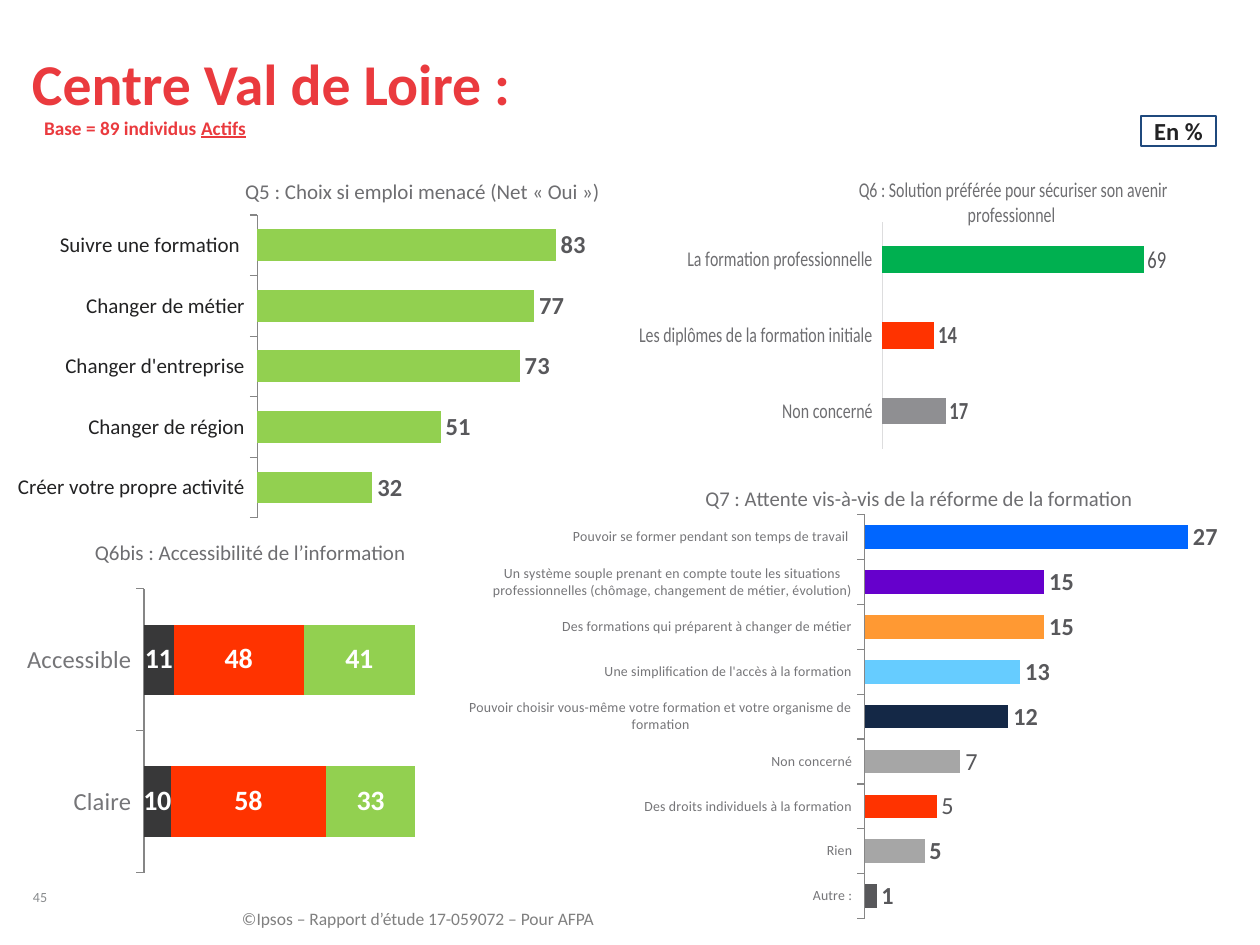
"""Build the Centre Val de Loire survey slide with its four bar charts."""
from dataclasses import dataclass, field
from typing import Any

from lxml.etree import SubElement
from pptx import Presentation
from pptx.chart.data import CategoryChartData
from pptx.dml.color import RGBColor
from pptx.enum.chart import XL_CHART_TYPE, XL_LABEL_POSITION, XL_TICK_LABEL_POSITION, XL_TICK_MARK
from pptx.enum.shapes import MSO_SHAPE
from pptx.enum.text import MSO_ANCHOR, MSO_AUTO_SIZE, PP_ALIGN
from pptx.oxml.ns import qn
from pptx.util import Emu, Pt

COLORS = {
    "red": "EA3A3E", "ink": "222223", "title": "6E6E71", "axis_text": "757578",
    "axis": "868686", "pale_axis": "DDDDDE", "label": "58585B", "white": "FFFFFF",
    "footer": "808080", "number": "888B8D", "frame": "1F497D", "lime": "92D050",
    "orange_red": "FF3300", "charcoal": "383839", "green": "00B050", "grey": "8F8F92",
    "silver": "A6A6A6", "navy": "142846", "sky": "66CCFF", "orange": "FF9933",
    "purple": "6600CC", "blue": "0066FF",
}


@dataclass(frozen=True)
class Box:
    left: int
    top: int
    width: int
    height: int

    def emu(self) -> tuple[Emu, ...]:
        return tuple(map(px, (self.left, self.top, self.width, self.height)))


@dataclass(frozen=True)
class Question:
    title: str
    title_at: tuple[int, int]
    frame: Box
    plot: Box
    categories: tuple[str, ...]
    answers: tuple[tuple[str, tuple[int, ...]], ...]
    maximum: int
    gap: int = 90
    stacked: bool = False
    ticks: XL_TICK_MARK = XL_TICK_MARK.OUTSIDE
    axis_color: str = "axis"
    category_font: dict[str, Any] = field(default_factory=dict)
    label_font: dict[str, Any] = field(default_factory=dict)
    point_colors: tuple[str, ...] = ()
    point_labels: dict[int, str] = field(default_factory=dict)


@dataclass(frozen=True)
class Note:
    box: Box
    runs: tuple[tuple[str, dict[str, Any]], ...]
    anchor: MSO_ANCHOR = MSO_ANCHOR.TOP
    wrap: bool = True


def px(length: int) -> Emu:
    return Emu(length * 914400 // 126)


def rgb(name: str) -> RGBColor:
    return RGBColor.from_string(COLORS[name])


def font_format(size: int, color: str, bold: bool = False, **extra: Any) -> dict[str, Any]:
    return {"name": "Calibri", "size": Pt(size), "bold": bold, "color": color, **extra}


def set_all(target: Any, values: dict[str, Any]) -> None:
    for name, value in values.items():
        if name == "color":
            target.color.rgb = rgb(value)
        else:
            setattr(target, name, value)


def fill(target: Any, color: str) -> None:
    target.format.fill.solid()
    target.format.fill.fore_color.rgb = rgb(color)


def set_layout(parent: Any, position: int, values: dict[str, Any]) -> None:
    for previous in parent.findall(qn("c:layout")):
        parent.remove(previous)
    layout = SubElement(parent, qn("c:layout"))
    manual = SubElement(layout, qn("c:manualLayout"))
    for name, value in values.items():
        SubElement(manual, qn(f"c:{name}")).set("val", str(value))
    parent.insert(position, layout)


def place_parts(chart: Any, question: Question) -> None:
    frame, plot = question.frame, question.plot

    def corner(left: int, top: int) -> dict[str, Any]:
        return {"xMode": "edge", "yMode": "edge",
                "x": round((left - frame.left) / frame.width, 3),
                "y": round((top - frame.top) / frame.height, 3)}

    set_layout(chart.chart_title._element, 1, corner(*question.title_at))
    set_layout(chart._chartSpace.chart.plotArea, 0, {
        "layoutTarget": "inner", **corner(plot.left, plot.top),
        "w": round(plot.width / frame.width, 3), "h": round(plot.height / frame.height, 3)})


def format_axes(chart: Any, question: Question) -> None:
    set_all(chart.value_axis, {
        "visible": False, "has_major_gridlines": False,
        "minimum_scale": 0, "maximum_scale": question.maximum})
    axis = chart.category_axis
    set_all(axis, {
        "has_major_gridlines": False, "major_tick_mark": question.ticks,
        "minor_tick_mark": XL_TICK_MARK.NONE,
        "tick_label_position": XL_TICK_LABEL_POSITION.LOW})
    set_all(axis.tick_labels.font, question.category_font)
    set_all(axis.format.line, {"width": Pt(0.75), "color": question.axis_color})


def draw_question(slide: Any, question: Question) -> None:
    table = CategoryChartData()
    table.categories = question.categories
    for number, (_, values) in enumerate(question.answers, 1):
        table.add_series(f"Series {number}", values)
    kind = XL_CHART_TYPE.BAR_STACKED_100 if question.stacked else XL_CHART_TYPE.BAR_CLUSTERED
    position = XL_LABEL_POSITION.CENTER if question.stacked else XL_LABEL_POSITION.OUTSIDE_END
    chart = slide.shapes.add_chart(kind, *question.frame.emu(), table).chart
    set_all(chart, {"has_legend": False, "has_title": True})
    set_all(chart.font, font_format(12, "ink"))
    heading = chart.chart_title.text_frame.paragraphs[0].add_run()
    heading.text = question.title
    set_all(heading.font, font_format(12, "title"))
    set_all(chart.plots[0], {
        "gap_width": question.gap, "vary_by_categories": False,
        "overlap": 100 if question.stacked else 0})
    format_axes(chart, question)
    place_parts(chart, question)
    for series, (color, _) in zip(chart.plots[0].series, question.answers):
        fill(series, color)
        series.invert_if_negative = False
        set_all(series.data_labels, {"show_value": True, "position": position})
        set_all(series.data_labels.font, question.label_font)
        for index, point_color in enumerate(question.point_colors):
            fill(series.points[index], point_color)
        for index, text in question.point_labels.items():
            label = series.points[index].data_label
            run = label.text_frame.paragraphs[0].add_run()
            run.text = text
            set_all(run.font, {**question.label_font, "bold": False})
            label.position = position


def write(shape: Any, runs: tuple, frame_format: dict[str, Any]) -> None:
    margins = dict.fromkeys(("margin_left", "margin_top", "margin_right", "margin_bottom"), 0)
    set_all(shape.text_frame, {**margins, **frame_format})
    for text, formats in runs:
        run = shape.text_frame.paragraphs[0].add_run()
        run.text = text
        set_all(run.font, formats)


def draw_note(slide: Any, note: Note) -> None:
    write(slide.shapes.add_textbox(*note.box.emu()), note.runs,
          {"word_wrap": note.wrap, "vertical_anchor": note.anchor})


def draw_title(slide: Any) -> None:
    title = slide.shapes.title
    box = Box(32, 55, 1192, 63).emu()
    set_all(title, dict(zip(("left", "top", "width", "height"), box)))
    write(title, (("Centre Val de Loire :", font_format(33, "red", True)),),
          {"vertical_anchor": MSO_ANCHOR.MIDDLE, "auto_size": MSO_AUTO_SIZE.NONE})
    set_all(title.text_frame.paragraphs[0], {"alignment": PP_ALIGN.LEFT, "line_spacing": 0.9})


def draw_unit(slide: Any) -> None:
    unit = slide.shapes.add_shape(MSO_SHAPE.RECTANGLE, *Box(1141, 116, 75, 30).emu())
    unit.shadow.inherit = False
    unit.fill.background()
    set_all(unit.line, {"color": "frame", "width": Pt(1.5)})
    write(unit, (("En %", font_format(14, "ink", True)),), {"vertical_anchor": MSO_ANCHOR.MIDDLE})
    unit.text_frame.paragraphs[0].alignment = PP_ALIGN.CENTER


BASE = font_format(11, "red", True)
VALUE = font_format(14, "label", True)
NOTES = (
    Note(Box(33, 861, 43, 44), (("45", font_format(8, "number")),), MSO_ANCHOR.BOTTOM, False),
    Note(Box(44, 116, 307, 47), (("Base = 89 individus ", BASE), ("Actifs", {**BASE, "underline": True}))),
    Note(Box(242, 908, 648, 82), (("©Ipsos – Rapport d’étude 17-059072 – Pour AFPA", font_format(10, "footer")),)),
)
QUESTIONS = (
    Question("Q6 : Solution préférée pour sécuriser son avenir professionnel ", (734, 172),
             Box(639, 152, 595, 339), Box(769, 222, 445, 227),
             ("Non concerné", "Les diplômes de la formation initiale", "La formation professionnelle"),
             (("silver", (17, 14, 70)),), 90, 182, ticks=XL_TICK_MARK.NONE, axis_color="pale_axis",
             category_font=font_format(12, "title"), label_font=VALUE,
             point_colors=("grey", "orange_red", "green"), point_labels={2: "69"}),
    Question("Q6bis : Accessibilité de l’information", (91, 535),
             Box(0, 529, 422, 391), Box(144, 589, 271, 284), ("Claire", "Accessible"),
             (("charcoal", (10, 11)), ("orange_red", (58, 48)), ("lime", (33, 41))), 1, 102, True,
             category_font=font_format(14, "axis_text"), label_font=font_format(16, "white", True)),
    Question("Q7 : Attente vis-à-vis de la réforme de la formation", (694, 481),
             Box(469, 473, 787, 460), Box(859, 515, 364, 404),
             ("Autre :", "Rien", "Des droits individuels à la formation", "Non concerné",
              "Pouvoir choisir vous-même votre formation et votre organisme de formation",
              "Une simplification de l'accès à la formation",
              "Des formations qui préparent à changer de métier",
              "Un système souple prenant en compte toute les situations professionnelles "
              "(chômage, changement de métier, évolution)",
              "Pouvoir se former pendant son temps de travail "),
             (("silver", (1, 5, 6, 8, 12, 13, 15, 15, 27)),), 30,
             category_font=font_format(8, "axis_text"), label_font=VALUE,
             point_colors=("label", "silver", "orange_red", "silver", "navy", "sky", "orange",
                           "purple", "blue"), point_labels={2: "5", 3: "7"}),
    Question("Q5 : Choix si emploi menacé (Net « Oui »)", (241, 174),
             Box(0, 164, 640, 368), Box(257, 215, 360, 303),
             ("Créer votre propre activité", "Changer de région", "Changer d'entreprise",
              "Changer de métier", "Suivre une formation "),
             (("lime", (32, 51, 73, 77, 83)),), 100,
             category_font=font_format(12, "ink"), label_font=VALUE),
)


def main() -> None:
    deck = Presentation()
    set_all(deck, {"slide_width": px(1260), "slide_height": px(945)})
    slide = deck.slides.add_slide(deck.slide_layouts[5])
    draw_title(slide)
    for question in QUESTIONS:
        draw_question(slide, question)
    for note in NOTES:
        draw_note(slide, note)
    draw_unit(slide)
    deck.save("out.pptx")


if __name__ == "__main__":
    main()
